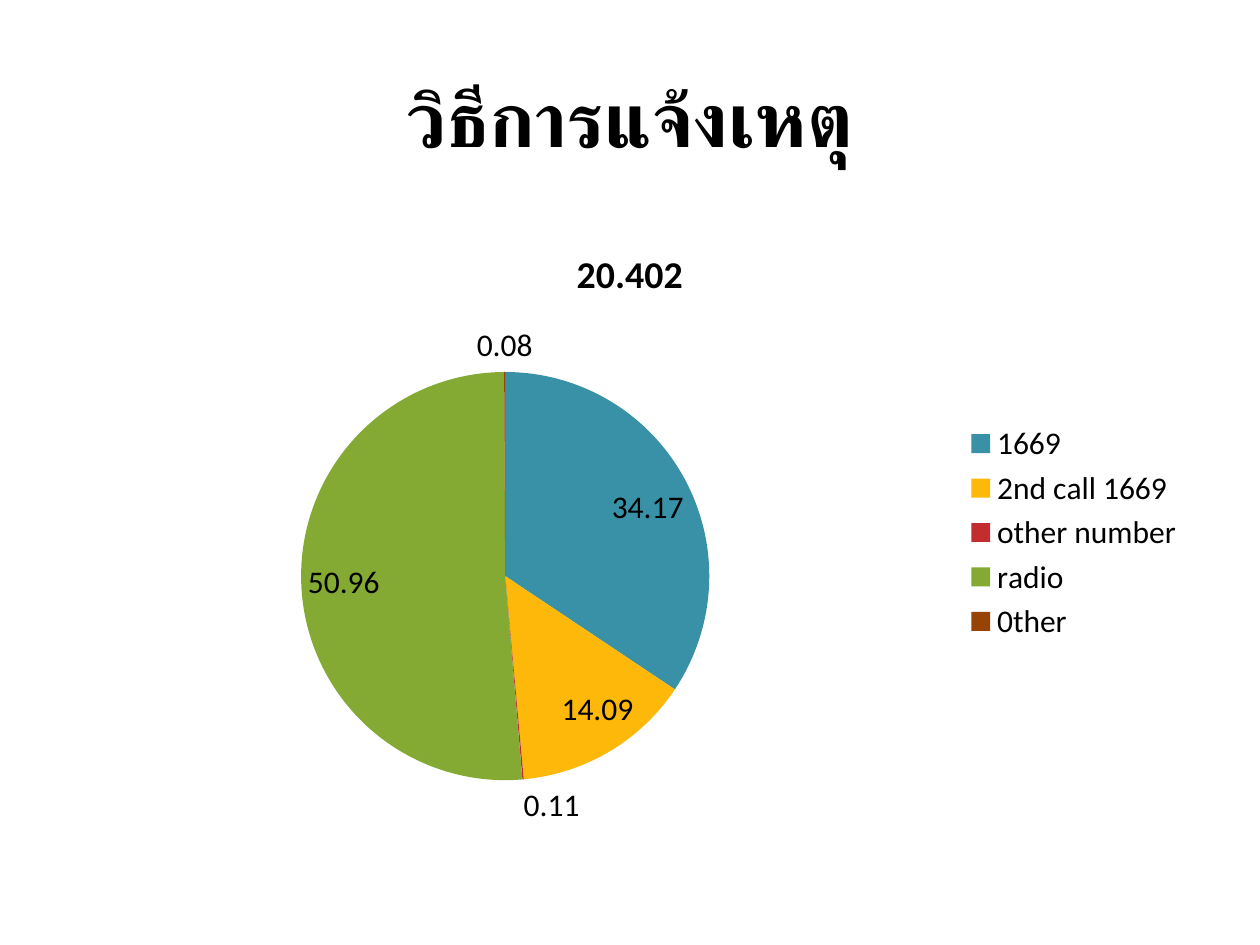
from dataclasses import dataclass

from lxml import etree
from pptx import Presentation
from pptx.chart.data import CategoryChartData
from pptx.dml.color import RGBColor
from pptx.enum.chart import XL_CHART_TYPE as ChartType
from pptx.enum.chart import XL_LABEL_POSITION as LabelPosition
from pptx.enum.chart import XL_LEGEND_POSITION as LegendPosition
from pptx.enum.text import MSO_ANCHOR as Anchor
from pptx.enum.text import PP_ALIGN as Align
from pptx.oxml.ns import qn
from pptx.util import Cm, Pt


@dataclass(frozen=True)
class Theme:
    font: str = "Calibri"
    ink: str = "000000"
    title_size: float = 44
    chart_title_size: float = 21.6
    chart_size: float = 18


theme = Theme()
calls = [
    ("1669", 34.17, "3891A7"),
    ("2nd call 1669", 14.09, "FEB80A"),
    ("other number", 0.11, "C32D2E"),
    ("radio", 50.96, "84AA33"),
    ("0ther", 0.08, "964305"),
]
pie_area = {"x": 0.21, "y": 0.24, "w": 0.36, "h": 0.66}


def write(frame, text, *, size, bold=False, align=Align.CENTER):
    para = frame.paragraphs[0]
    para.alignment = align
    span = para.add_run()
    span.text = text
    span.font.name = theme.font
    span.font.size = Pt(size)
    span.font.bold = bold
    span.font.color.rgb = RGBColor.from_string(theme.ink)


deck = Presentation()
deck.slide_width, deck.slide_height = Cm(25.4), Cm(19.05)
page = deck.slides.add_slide(deck.slide_layouts[6])

# Heading
box = page.shapes.add_textbox(Cm(1.27), Cm(0.76), Cm(22.86), Cm(3.18))
box.text_frame.word_wrap = True
box.text_frame.vertical_anchor = Anchor.MIDDLE
write(box.text_frame, "วิธีการแจ้งเหตุ", size=theme.title_size, bold=True)

# Pie chart
data = CategoryChartData(number_format="General")
data.categories = [name for name, share, color in calls]
data.add_series("20.402", [share for name, share, color in calls])
chart = page.shapes.add_chart(
    ChartType.PIE, Cm(1.27), Cm(4.45), Cm(22.86), Cm(12.57), data
).chart
chart.font.name = theme.font
chart.font.size = Pt(theme.chart_size)
chart.font.color.rgb = RGBColor.from_string(theme.ink)

chart.has_title = True
chart.chart_title.include_in_layout = False
write(chart.chart_title.text_frame, "20.402", size=theme.chart_title_size, bold=True)

chart.has_legend = True
chart.legend.position = LegendPosition.RIGHT
chart.legend.include_in_layout = False

plot = chart.plots[0]
plot.vary_by_categories = True
plot.has_data_labels = True
plot.data_labels.show_value = True
plot.data_labels.show_percentage = False
plot.data_labels.position = LabelPosition.BEST_FIT

for index, (name, share, color) in enumerate(calls):
    fill = plot.series[0].points[index].format.fill
    fill.solid()
    fill.fore_color.rgb = RGBColor.from_string(color)

# Fixed place for the pie inside the chart
plot_area = chart.element.find(f".//{qn('c:plotArea')}")
for old_layout in plot_area.findall(qn("c:layout")):
    plot_area.remove(old_layout)
layout = etree.Element(qn("c:layout"))
plot_area.insert(0, layout)
manual = etree.SubElement(layout, qn("c:manualLayout"))
settings = {"layoutTarget": "inner", "xMode": "edge", "yMode": "edge", **pie_area}
for tag, value in settings.items():
    etree.SubElement(manual, qn(f"c:{tag}"), val=str(value))

deck.save("out.pptx")
